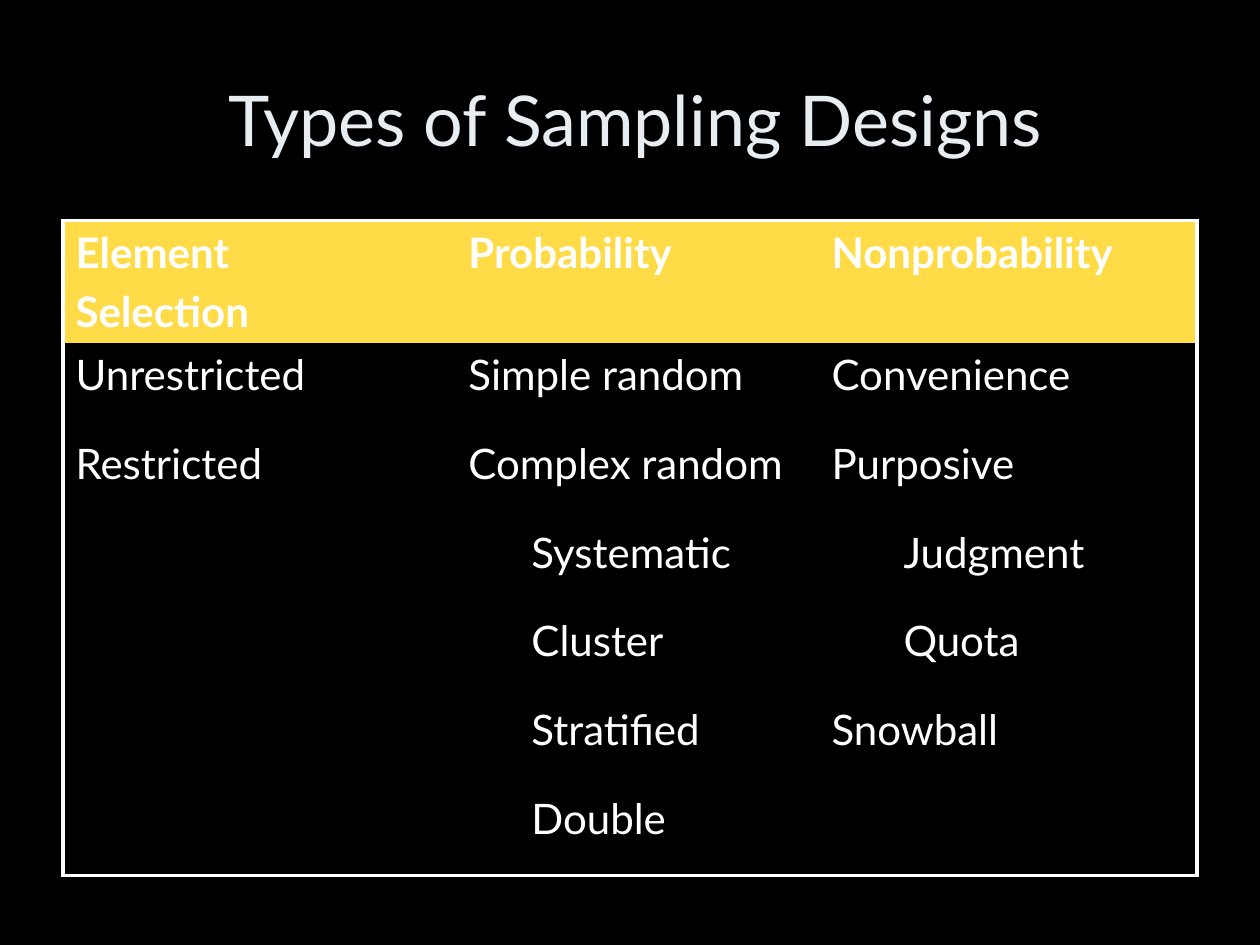
from pptx import Presentation
from pptx.dml.color import RGBColor as Rgb
from pptx.enum.text import MSO_ANCHOR as Anchor, PP_ALIGN as Align
from pptx.oxml.ns import qn
from pptx.util import Cm, Pt
from lxml.etree import SubElement as Sub

FACE = "Lato"
WHITE, BLACK, GOLD, PALE = "FFFFFF", "000000", "FFDC47", "E8EDF2"
WIDTHS = [7.92, 7.32, 7.62]
STEP = 1.79
# A cell is its text, with an indent in cm where it has one
ROWS = [
    ["Element\nSelection", "Probability", "Nonprobability"],
    ["Unrestricted", "Simple random", "Convenience"],
    ["Restricted", "Complex random", "Purposive"],
    ["", ("Systematic", 1.27), ("Judgment", 1.45)],
    ["", ("Cluster", 1.27), ("Quota", 1.45)],
    ["", ("Stratified", 1.27), "Snowball"],
    ["", ("Double", 1.27), ""],
]


def paint(color, code):
    color.rgb = Rgb.from_string(code)


def style(para, size, code, bold=False):
    font = para.font
    font.name, font.size, font.bold = FACE, Pt(size), bold
    paint(font.color, code)


def flood(fill, code):
    fill.solid()
    paint(fill.fore_color, code)


def add_title(slide, text):
    box = slide.shapes.add_textbox(Cm(2.11), Cm(0.91), Cm(21.39), Cm(2.97))
    frame = box.text_frame
    frame.word_wrap = True
    frame.vertical_anchor = Anchor.MIDDLE
    para = frame.paragraphs[0]
    para.text, para.alignment = text, Align.CENTER
    style(para, 40, PALE)


def edge(cell, sides):
    """Draw white lines on the given sides and clear the others."""
    props = cell._tc.get_or_add_tcPr()
    for side in "LRTB":
        line = Sub(props, qn("a:ln" + side), w=str(Pt(2.25)))
        if side in sides:
            fill = Sub(line, qn("a:solidFill"))
            Sub(fill, qn("a:srgbClr"), val=WHITE)
        else:
            Sub(line, qn("a:noFill"))


def write(cell, item, bold):
    text, indent = item if isinstance(item, tuple) else (item, 0)
    cell.text = text
    for i, para in enumerate(cell.text_frame.paragraphs):
        if indent:
            para._p.get_or_add_pPr().set("marL", str(Cm(indent)))
        if i:
            para.space_before = Pt(5)
        style(para, 24, WHITE, bold)


def add_grid(slide):
    rows, cols = len(ROWS), len(WIDTHS)
    table = slide.shapes.add_table(
        rows, cols, Cm(1.27), Cm(4.45), Cm(sum(WIDTHS)), Cm(STEP * rows)
    ).table
    table.horz_banding = False
    for col, width in zip(table.columns, WIDTHS):
        col.width = Cm(width)
    for r, row in enumerate(ROWS):
        table.rows[r].height = Cm(STEP)
        for c, item in enumerate(row):
            cell = table.cell(r, c)
            # Only the outer frame of the table has lines
            outer = {"L": c == 0, "R": c == cols - 1,
                     "T": r == 0, "B": r == rows - 1}
            edge(cell, [side for side, on in outer.items() if on])
            flood(cell.fill, BLACK if r else GOLD)
            write(cell, item, bold=r == 0)


def main():
    prs = Presentation()
    prs.slide_width, prs.slide_height = Cm(25.4), Cm(19.05)
    slide = prs.slides.add_slide(prs.slide_layouts[6])
    flood(slide.background.fill, BLACK)
    add_title(slide, "Types of Sampling Designs")
    add_grid(slide)
    prs.save("out.pptx")


if __name__ == "__main__":
    main()
